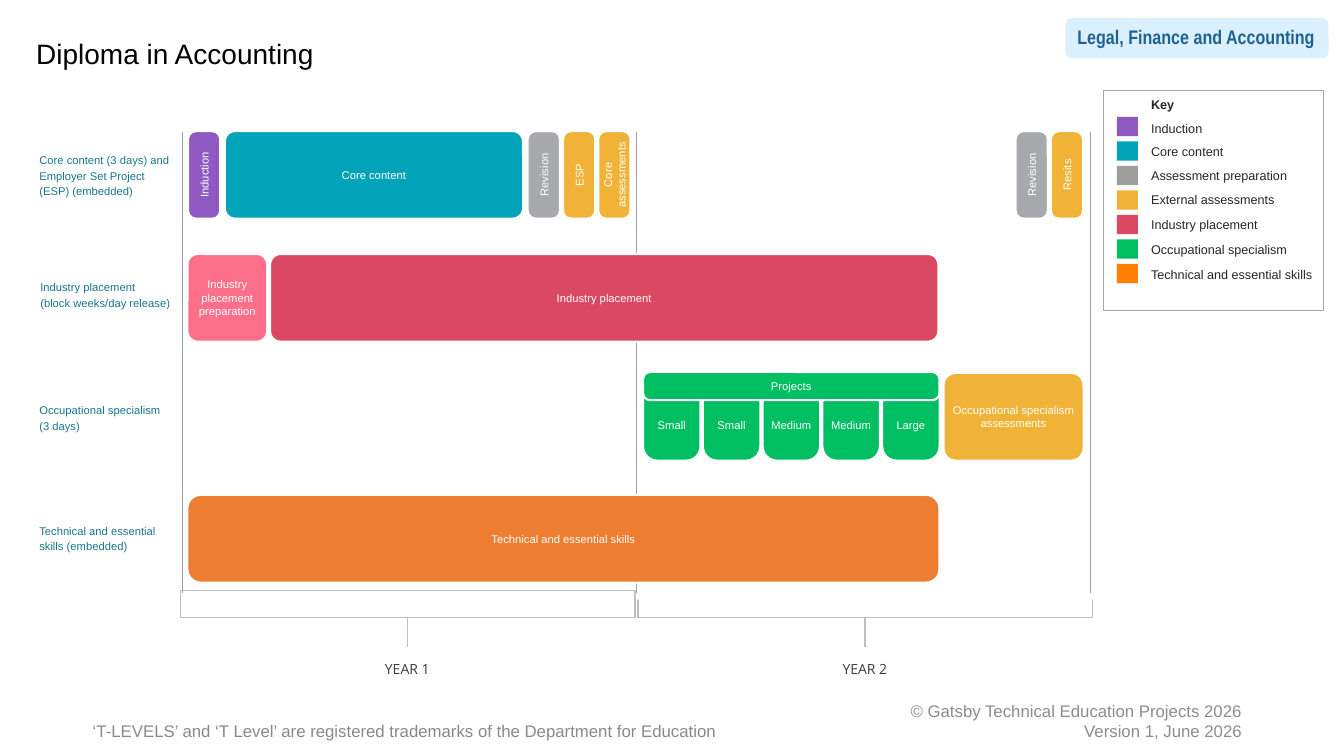
from dataclasses import dataclass

from lxml.etree import SubElement
from pptx import Presentation
from pptx.dml.color import RGBColor
from pptx.enum.shapes import MSO_CONNECTOR, MSO_SHAPE
from pptx.enum.text import MSO_ANCHOR, PP_ALIGN
from pptx.oxml.ns import qn
from pptx.util import Pt

C = {
    "white": "FFFFFF", "black": "000000", "ink": "262626", "label": "1A768D",
    "induction": "9059C2", "core": "00A3B7", "revision": "A7A9AC",
    "prep": "9E9E9D", "external": "F0B337", "placement": "DB4862",
    "placement_prep": "FD6F88", "specialism": "00BF63", "skills": "ED7D31",
    "skills_key": "FF7F00", "badge": "DBF0FF", "badge_text": "1E6192",
    "bracket": "BFBFBF", "rule": "9E9E9D", "key_line": "A6A6A6",
    "year": "3C3C3B", "copyright": "8C8C8C", "trademark": "898989",
}
Box = tuple[float, float, float, float]  # left, top, width, height
WIDE: Box = (7.2, 3.6, 7.2, 3.6)  # insets: left, top, right, bottom
NARROW: Box = (2.88, 3.6, 2.88, 3.6)
NONE: Box = (0, 0, 0, 0)
BAR_H = 62.64
ROWS = (93.6, 181.44, 266.4, 353.52)


@dataclass
class Style:
    color: str
    size: float = 8
    font: str = "Arial"
    bold: bool = False
    align: PP_ALIGN = PP_ALIGN.LEFT
    anchor: MSO_ANCHOR = MSO_ANCHOR.TOP
    insets: Box = NONE
    spacing: float = 1.0
    before: float = 0


@dataclass
class Bar:
    text: str
    fill: str
    left: float
    top: float
    width: float
    height: float = BAR_H
    adj: float = 0.24
    insets: Box = WIDE
    upright: bool = False


@dataclass
class Label:
    lines: list[str]
    box: Box
    style: Style


def rgb(name: str) -> RGBColor:
    return RGBColor.from_string(C[name])


def write(sp, lines: list[str], st: Style, bold_first: bool = False) -> None:
    tf = sp.text_frame
    tf.word_wrap = True
    tf.vertical_anchor = st.anchor
    tf.margin_left, tf.margin_top, tf.margin_right, tf.margin_bottom = map(Pt, st.insets)
    for i, line in enumerate(lines):
        p = tf.add_paragraph() if i else tf.paragraphs[0]
        p.alignment = st.align
        p.line_spacing = st.spacing
        p.space_before = Pt(st.before if i else 0)
        r = p.add_run()
        r.text = line
        r.font.size, r.font.name = Pt(st.size), st.font
        r.font.bold = st.bold or (bold_first and i == 0)
        r.font.color.rgb = rgb(st.color)


def add_box(s, kind: MSO_SHAPE, box: Box, fill: str = "", line: str = "", width: float = 1):
    sp = s.shapes.add_shape(kind, *map(Pt, box))
    sp.shadow.inherit = False
    if fill:
        sp.fill.solid()
        sp.fill.fore_color.rgb = rgb(fill)
    else:
        sp.fill.background()
    if line:
        sp.line.color.rgb = rgb(line)
        sp.line.width = Pt(width)
    else:
        sp.line.fill.background()
    return sp


def add_vertical(s, x: float, top: float, bottom: float, color: str, width: float) -> None:
    cx = s.shapes.add_connector(MSO_CONNECTOR.STRAIGHT, Pt(x), Pt(top), Pt(x), Pt(bottom))
    cx.line.color.rgb = rgb(color)
    cx.line.width = Pt(width)
    SubElement(cx._element.spPr, qn("a:effectLst"))


def add_label(s, label: Label) -> None:
    write(s.shapes.add_textbox(*map(Pt, label.box)), label.lines, label.style)


def add_bar(s, bar: Bar) -> None:
    """Draw a white-edged bar; an upright one is turned so its text reads upwards."""
    left, top, w, h = bar.left, bar.top, bar.width, bar.height
    if bar.upright:
        left, top, w, h = left + (w - h) / 2, top + (h - w) / 2, h, w
    sp = add_box(s, MSO_SHAPE.ROUNDED_RECTANGLE, (left, top, w, h), bar.fill, "white", 1.5)
    sp.adjustments[0] = bar.adj
    sp.rotation = 270 if bar.upright else 0
    write(sp, [bar.text], Style("white", align=PP_ALIGN.CENTER,
                                anchor=MSO_ANCHOR.MIDDLE, insets=bar.insets))


def add_timeline(s) -> None:
    for left in (128.88, 455.76):
        add_box(s, MSO_SHAPE.RECTANGLE, (left, 421.92, 324.72, 19.08), line="bracket")
    add_box(s, MSO_SHAPE.RECTANGLE, (454.32, 416.16, 329.04, 12.24), "white")
    year = Style("year", 10, "Open Sans", align=PP_ALIGN.CENTER, spacing=1.02)
    for name, x in (("YEAR 1", 290.88), ("YEAR 2", 617.76)):
        add_vertical(s, x, 440.64, 462.24, "bracket", 1)
        add_label(s, Label([name], (x - 24, 471.6, 48, 10.08), year))
    for x in (454.32, 130.32, 779.04):
        add_vertical(s, x, 94.32, 423.36, "rule", 0.75)


def add_key(s) -> None:
    entries = [
        ("Induction", "induction"), ("Core content", "core"),
        ("Assessment preparation", "prep"), ("External assessments", "external"),
        ("Industry placement", "placement"), ("Occupational specialism", "specialism"),
        ("Technical and essential skills", "skills_key"),
    ]
    sp = add_box(s, MSO_SHAPE.RECTANGLE, (788.4, 64.8, 156.96, 156.96), line="key_line")
    write(sp, ["Key"] + [name for name, _ in entries],
          Style("ink", 9, insets=(33.84, 3.6, 7.2, 3.6), spacing=1.08, before=6),
          bold_first=True)
    for p in sp.text_frame.paragraphs[1:4]:
        p.line_spacing = 1.0
    for i, (_, color) in enumerate(entries):
        add_box(s, MSO_SHAPE.RECTANGLE, (797.76, 83.52 + 17.5 * i, 15.12, 13.68), color)


def main() -> None:
    prs = Presentation()
    prs.slide_width, prs.slide_height = Pt(960), Pt(540)
    s = prs.slides.add_slide(prs.slide_layouts[6])
    add_timeline(s)

    badge = add_box(s, MSO_SHAPE.ROUNDED_RECTANGLE, (761.04, 12.96, 187.92, 28.8), "badge")
    write(badge, ["Legal, Finance and Accounting"],
          Style("badge_text", 14, "Arial Narrow", bold=True, insets=WIDE))

    row = Style("label", spacing=1.16)
    labels = [
        Label(["Diploma in Accounting"], (18.72, 22.32, 730, 31.68),
              Style("black", 20, insets=WIDE)),
        Label(["© Gatsby Technical Education Projects 2026", "Version 1, June 2026"],
              (635.76, 500.4, 258.48, 28.8),
              Style("copyright", 12, align=PP_ALIGN.RIGHT, anchor=MSO_ANCHOR.MIDDLE, insets=WIDE)),
        Label(["‘T-LEVELS’ and ‘T Level’ are registered trademarks of the Department for Education"],
              (66.24, 514.8, 490.32, 14.4), Style("trademark", 12)),
        Label(["Core content (3 days) and Employer Set Project (ESP) (embedded)"],
              (28.08, 108, 95, 33.84), row),
        Label(["Industry placement", "(block weeks/day release)"],
              (28.8, 198.72, 97.92, 22.32), row),
        Label(["Occupational specialism", "(3 days)"], (28.08, 286.56, 93.6, 22.32), row),
        Label(["Technical and essential skills (embedded)"], (28.08, 372.96, 93.6, 22.32), row),
    ]
    for label in labels:
        add_label(s, label)

    core, placement, specialism, skills = ROWS
    uprights = [
        ("Induction", "induction", 134.28, WIDE), ("Revision", "revision", 376.92, WIDE),
        ("ESP", "external", 402.12, NARROW), ("Core assessments", "external", 427.32, NARROW),
        ("Revision", "revision", 725.4, WIDE), ("Resits", "external", 750.6, NARROW),
    ]
    bars = [Bar(text, fill, x, core, 23.04, adj=0.25, insets=ins, upright=True)
            for text, fill, x, ins in uprights]
    bars += [
        Bar("Core content", "core", 160.56, core, 213.12, adj=0.12),
        Bar("Industry placement preparation", "placement_prep", 133.92, placement, 56.88,
            adj=0.13, insets=(0, 3.6, 0, 3.6)),
        Bar("Industry placement", "placement", 192.96, placement, 477.36, adj=0.12),
    ]
    bars += [Bar(size, "specialism", 459.36 + 42.7 * i, 270, 41.04, 59.04, 0.25,
                 (2.88, 11.52, 2.88, 3.6))
             for i, size in enumerate(["Small", "Small", "Medium", "Medium", "Large"])]
    bars += [
        Bar("Projects", "specialism", 459.36, 265.68, 211.68, 20.16, 0.25, NARROW),
        Bar("Occupational specialism assessments", "external", 673.92, specialism, 100.08,
            adj=0.14, insets=NARROW),
        Bar("Technical and essential skills", "skills", 133.92, skills, 537.12, adj=0.15),
    ]
    for bar in bars:
        add_bar(s, bar)
    add_key(s)
    prs.save("out.pptx")


if __name__ == "__main__":
    main()
